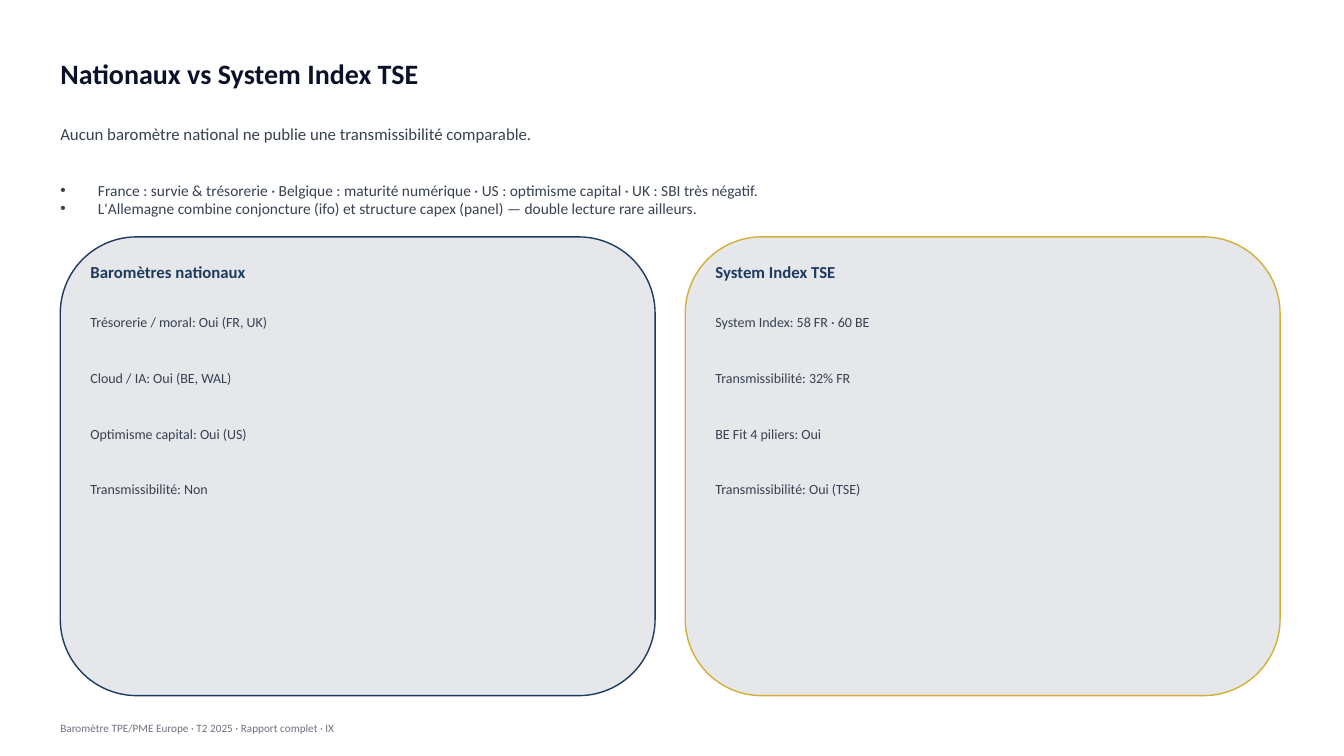
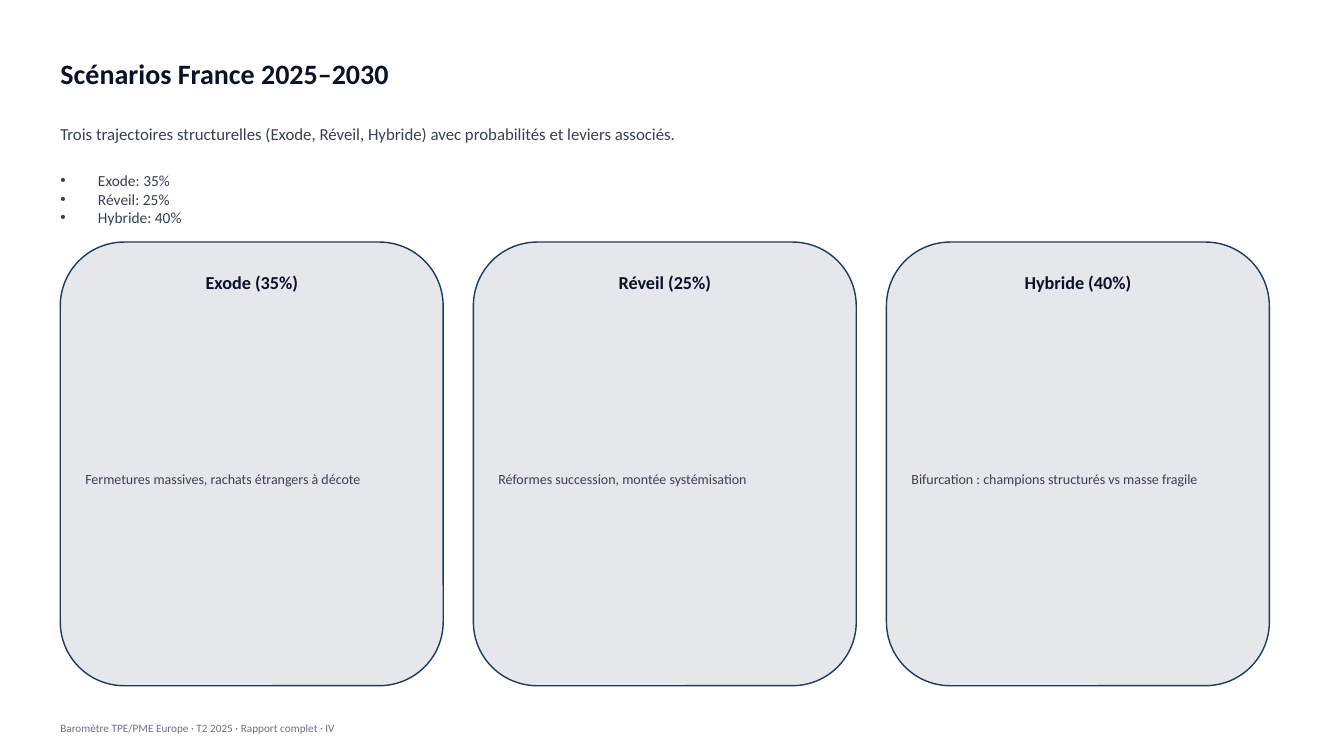
from pptx import Presentation
from pptx.dml.color import RGBColor
from pptx.enum.shapes import MSO_SHAPE
from pptx.enum.text import MSO_ANCHOR, MSO_AUTO_SIZE, PP_ALIGN
from pptx.oxml.ns import qn
from pptx.util import Cm, Pt
from lxml import etree

ROUNDED = MSO_SHAPE.ROUNDED_RECTANGLE
MIDDLE = MSO_ANCHOR.MIDDLE
NO_FIT = MSO_AUTO_SIZE.NONE
LEFT, CENTER = PP_ALIGN.LEFT, PP_ALIGN.CENTER

FONT = "Calibri"
INK, BODY, MUTED = "0A1128", "374151", "6B7280"
NAVY, GOLD, PANEL = "1E3A5F", "D4AF37", "E5E7EB"
TITLE_ONLY = 5

MARGIN, CONTENT_WIDTH = 1.27, 31.24
CARD_LEFT, CARD_GAP, CARD_PADDING = 1.52, 0.76, 0.38
BULLET_INDENT = 0.95


def color(hex_string):
    return RGBColor.from_string(hex_string)


class Deck:
    """Holds the shared style and the slide being built."""

    def __init__(self):
        self.presentation = Presentation()
        self.presentation.slide_width = Cm(33.87)
        self.presentation.slide_height = Cm(19.05)
        self.slide = None

    def start_slide(self, title, lead, bullets, section):
        layout = self.presentation.slide_layouts[TITLE_ONLY]
        self.slide = self.presentation.slides.add_slide(layout)
        placeholder = self.slide.shapes.title
        placeholder.left, placeholder.top = Cm(MARGIN), Cm(1.02)
        placeholder.width, placeholder.height = Cm(CONTENT_WIDTH), Cm(1.65)
        self.fill_text(placeholder, [title], 20, INK, bold=True)
        self.text(lead, MARGIN, 2.67, CONTENT_WIDTH, 1.4, 12)
        self.bullets(bullets)
        self.text(f"Baromètre TPE/PME Europe · T2 2025 · Rapport complet · {section}",
                  MARGIN, 17.91, CONTENT_WIDTH, 0.89, 8, MUTED)

    def fill_text(self, shape, lines, size, text_color=BODY, bold=False,
                  align=LEFT, bulleted=False):
        frame = shape.text_frame
        frame.word_wrap = True
        frame.auto_size = NO_FIT
        frame.vertical_anchor = MIDDLE
        for index, line in enumerate(lines):
            paragraph = frame.add_paragraph() if index else frame.paragraphs[0]
            paragraph.alignment = align
            if bulleted:
                self.add_bullet(paragraph)
            run = paragraph.add_run()
            run.text = line
            run.font.name = FONT
            run.font.size = Pt(size)
            run.font.bold = bold
            run.font.color.rgb = color(text_color)

    def add_bullet(self, paragraph):
        properties = paragraph._p.get_or_add_pPr()
        properties.set("marL", str(Cm(BULLET_INDENT)))
        properties.set("indent", str(-Cm(BULLET_INDENT)))
        etree.SubElement(properties, qn("a:buFont")).set("typeface", "Arial")
        etree.SubElement(properties, qn("a:buChar")).set("char", "•")

    def text_box(self, left, top, width, height):
        return self.slide.shapes.add_textbox(Cm(left), Cm(top), Cm(width), Cm(height))

    def text(self, line, left, top, width, height, size, text_color=BODY,
             bold=False, align=LEFT):
        box = self.text_box(left, top, width, height)
        self.fill_text(box, [line], size, text_color, bold, align)

    def bullets(self, lines):
        box = self.text_box(MARGIN, 3.94, CONTENT_WIDTH, 2.16)
        self.fill_text(box, lines, 11, bulleted=True)

    def card(self, left, top, width, height, line_color):
        shape = self.slide.shapes.add_shape(
            ROUNDED, Cm(left), Cm(top), Cm(width), Cm(height))
        shape.shadow.inherit = False
        shape.fill.solid()
        shape.fill.fore_color.rgb = color(PANEL)
        shape.line.color.rgb = color(line_color)
        shape.line.width = Pt(1)

    def comparison(self, columns):
        """Side-by-side cards, each with a heading and evenly spaced rows."""
        top, width, height, inset = 5.97, 14.99, 11.56, 0.51
        for index, (heading, line_color, rows) in enumerate(columns):
            left = CARD_LEFT + index * (width + CARD_GAP)
            text_left, text_width = left + inset, width - 2 * inset
            self.card(left, top, width, height, line_color)
            self.text(heading, text_left, top + CARD_PADDING, text_width, 1.02,
                      12, NAVY, bold=True)
            for number, row in enumerate(rows):
                self.text(row, text_left, 7.49 + number * 1.4, text_width, 1.27, 10)

    def scenarios(self, items):
        """Equal cards, each with a centred heading and one description."""
        top, width, height = 6.1, 9.65, 11.18
        for index, (heading, description) in enumerate(items):
            left = CARD_LEFT + index * (width + CARD_GAP)
            self.card(left, top, width, height, NAVY)
            self.text(heading, left, top + CARD_PADDING, width, 1.27,
                      13, INK, bold=True, align=CENTER)
            self.text(description, left + CARD_PADDING, top + 1.9,
                      width - 2 * CARD_PADDING, 8.13, 10)


def main():
    deck = Deck()

    deck.start_slide(
        "Nationaux vs System Index TSE",
        "Aucun baromètre national ne publie une transmissibilité comparable.",
        ["France : survie & trésorerie · Belgique : maturité numérique · "
         "US : optimisme capital · UK : SBI très négatif.",
         "L'Allemagne combine conjoncture (ifo) et structure capex (panel) — "
         "double lecture rare ailleurs."],
        "IX")
    deck.comparison([
        ("Baromètres nationaux", NAVY,
         ["Trésorerie / moral: Oui (FR, UK)", "Cloud / IA: Oui (BE, WAL)",
          "Optimisme capital: Oui (US)", "Transmissibilité: Non"]),
        ("System Index TSE", GOLD,
         ["System Index: 58 FR · 60 BE", "Transmissibilité: 32% FR",
          "BE Fit 4 piliers: Oui", "Transmissibilité: Oui (TSE)"]),
    ])

    deck.start_slide(
        "Scénarios France 2025–2030",
        "Trois trajectoires structurelles (Exode, Réveil, Hybride) "
        "avec probabilités et leviers associés.",
        ["Exode: 35%", "Réveil: 25%", "Hybride: 40%"],
        "IV")
    deck.scenarios([
        ("Exode (35%)", "Fermetures massives, rachats étrangers à décote"),
        ("Réveil (25%)", "Réformes succession, montée systémisation"),
        ("Hybride (40%)", "Bifurcation : champions structurés vs masse fragile"),
    ])

    deck.presentation.save("out.pptx")


if __name__ == "__main__":
    main()
